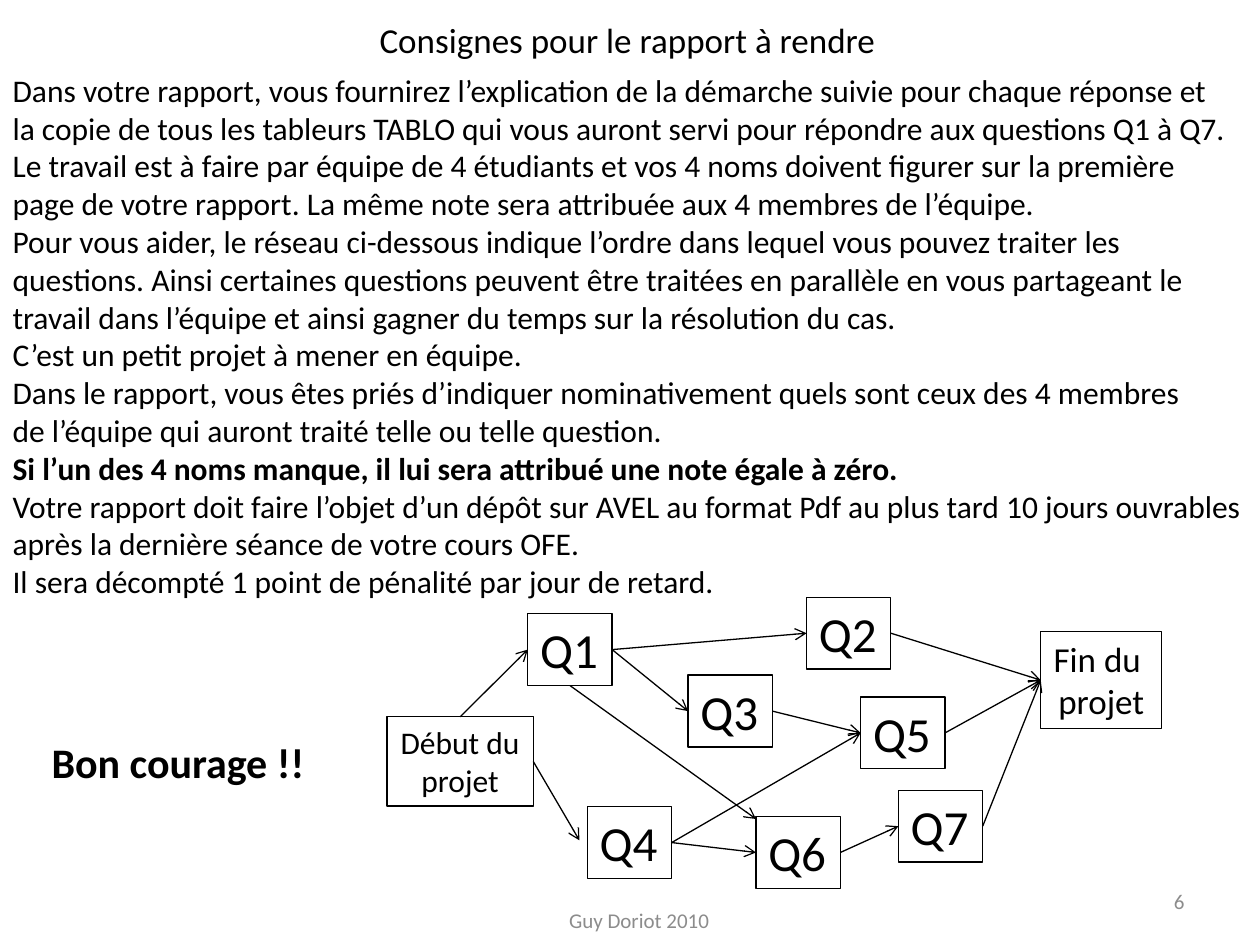
"""Build the report instructions slide with its question network."""
from lxml import etree
from pptx import Presentation
from pptx import util as u
from pptx.dml.color import RGBColor
from pptx.enum import shapes, text
from pptx.oxml import ns

COLORS = {"ink": "000000", "muted": "8C8C8C", "paper": "FFFFFF"}
LEFT, CENTER, RIGHT = text.PP_ALIGN.LEFT, text.PP_ALIGN.CENTER, text.PP_ALIGN.RIGHT
TOP, MIDDLE = text.MSO_ANCHOR.TOP, text.MSO_ANCHOR.MIDDLE
SITES = {"top": 0, "left": 1, "bottom": 2, "right": 3}

WARNING = "Si l’un des 4 noms manque, il lui sera attribué une note égale à zéro."
INSTRUCTIONS = [
    "Dans votre rapport, vous fournirez l’explication de la démarche suivie pour chaque réponse et",
    "la copie de tous les tableurs TABLO qui vous auront servi pour répondre aux questions Q1 à Q7.",
    "Le travail est à faire par équipe de 4 étudiants et vos 4 noms doivent figurer sur la première",
    "page de votre rapport. La même note sera attribuée aux 4 membres de l’équipe.",
    "Pour vous aider, le réseau ci-dessous indique l’ordre dans lequel vous pouvez traiter les",
    "questions. Ainsi certaines questions peuvent être traitées en parallèle en vous partageant le",
    "travail dans l’équipe et ainsi gagner du temps sur la résolution du cas.",
    "C’est un petit projet à mener en équipe.",
    "Dans le rapport, vous êtes priés d’indiquer nominativement quels sont ceux des 4 membres",
    "de l’équipe qui auront traité telle ou telle question.",
    WARNING,
    "Votre rapport doit faire l’objet d’un dépôt sur AVEL au format Pdf au plus tard 10 jours ouvrables",
    "après la dernière séance de votre cours OFE.",
    "Il sera décompté 1 point de pénalité par jour de retard.",
]
QUESTIONS = {
    "Q1": (10.64, 12.37), "Q2": (16.26, 12.04), "Q3": (13.87, 13.61),
    "Q4": (11.84, 16.26), "Q5": (17.35, 14.05), "Q6": (15.24, 16.46),
    "Q7": (18.11, 15.93),
}
LINKS = [
    ("start", "top", "Q1"), ("Q1", "right", "Q2"), ("Q1", "right", "Q3"),
    ("Q3", "right", "Q5"), ("Q4", "right", "Q5"), ("Q4", "right", "Q6"),
    ("Q6", "right", "Q7"), ("Q7", "right", "end"), ("Q5", "right", "end"),
    ("Q2", "right", "end"),
]


class SlideBuilder:
    """Hold the slide and the style shared by its elements."""

    font = "Calibri"
    line_width = u.Pt(0.75)

    def __init__(self, page):
        """Keep the page to draw on."""
        self.page = page

    def color(self, name):
        """Return a named colour."""
        return RGBColor.from_string(COLORS[name])

    def add_lines(self, box, lines, size, align=LEFT, color="ink", bold=(), wrap=False, anchor=TOP):
        """Put one paragraph per line in a box."""
        frame = box.text_frame
        frame.word_wrap = wrap
        frame.auto_size = text.MSO_AUTO_SIZE.NONE
        frame.vertical_anchor = anchor
        for index, line in enumerate(lines):
            para = frame.add_paragraph() if index else frame.paragraphs[0]
            para.alignment = align
            para.space_before = para.space_after = u.Pt(0)
            span = para.add_run()
            span.text = line
            span.font.name = self.font
            span.font.size = u.Pt(size)
            span.font.bold = line in bold
            span.font.color.rgb = self.color(color)

    def place(self, box, left, top, width, height):
        """Move and size a placeholder."""
        box.left, box.top = u.Cm(left), u.Cm(top)
        box.width, box.height = u.Cm(width), u.Cm(height)

    def title(self, line, area):
        """Fill the title placeholder."""
        box = self.page.shapes.title
        self.place(box, *area)
        self.add_lines(box, [line], 20, CENTER, wrap=True, anchor=MIDDLE)

    def body(self, lines, area, bold):
        """Fill the body placeholder with plain lines."""
        box = self.page.placeholders[1]
        self.place(box, *area)
        self.add_lines(box, lines, 18, bold=bold)
        for para in box.text_frame.paragraphs:
            props = para._p.get_or_add_pPr()
            props.set("marL", "0")
            props.set("indent", "0")
            etree.SubElement(props, ns.qn("a:buNone"))

    def label(self, line, area, size, **style):
        """Add a free text box."""
        box = self.page.shapes.add_textbox(*map(u.Cm, area))
        self.add_lines(box, [line], size, **style)

    def node(self, lines, area, size, align=LEFT):
        """Add an outlined box of the network."""
        box = self.page.shapes.add_shape(shapes.MSO_SHAPE.RECTANGLE, *map(u.Cm, area))
        box.shadow.inherit = False
        box.fill.background()
        box.line.color.rgb = self.color("ink")
        box.line.width = self.line_width
        self.add_lines(box, lines, size, align)
        return box

    def arrow(self, source, site, target=None, point=(0, 0)):
        """Link a node to the left side of another, or to a point."""
        end = map(u.Cm, point)
        link = self.page.shapes.add_connector(shapes.MSO_CONNECTOR.STRAIGHT, 0, 0, *end)
        link.begin_connect(source, SITES[site])
        if target is not None:
            link.end_connect(target, SITES["left"])
        link.line.color.rgb = self.color("ink")
        link.line.width = self.line_width
        etree.SubElement(link.line._get_or_add_ln(), ns.qn("a:tailEnd"), type="arrow")
        etree.SubElement(link._element.spPr, ns.qn("a:effectLst"))


def main():
    """Build and save the deck."""
    deck = Presentation()
    deck.slide_width, deck.slide_height = u.Cm(25.4), u.Cm(19.05)
    page = deck.slides.add_slide(deck.slide_layouts[1])
    builder = SlideBuilder(page)
    page.background.fill.solid()
    page.background.fill.fore_color.rgb = builder.color("paper")

    builder.title("Consignes pour le rapport à rendre", (1.22, 0, 22.86, 1.6))
    builder.body(INSTRUCTIONS, (0, 1.3, 25.73, 11.02), bold=[WARNING])
    builder.label("Bon courage !!", (0.79, 14.73, 5.66, 1.27), 24, bold=["Bon courage !!"])

    nodes = {name: builder.node([name], (*corner, 1.7, 1.45), 28)
             for name, corner in QUESTIONS.items()}
    nodes["start"] = builder.node(["Début du", "projet"], (7.8, 14.45, 2.95, 1.8), 18, CENTER)
    nodes["end"] = builder.node(["Fin du ", "projet"], (20.98, 12.73, 2.44, 1.96), 20, CENTER)
    for source, site, target in LINKS:
        builder.arrow(nodes[source], site, nodes[target])
    builder.arrow(nodes["start"], "right", point=(11.68, 16.94))
    builder.arrow(nodes["Q1"], "bottom", point=(15.24, 16.51))

    footer = {"color": "muted", "wrap": True, "anchor": MIDDLE}
    builder.label("6", (18.21, 17.65, 5.92, 1.02), 12, align=RIGHT, **footer)
    builder.label("Guy Doriot 2010", (8.86, 18.03, 8.05, 1.02), 12, align=CENTER, **footer)
    deck.save("out.pptx")


if __name__ == "__main__":
    main()
